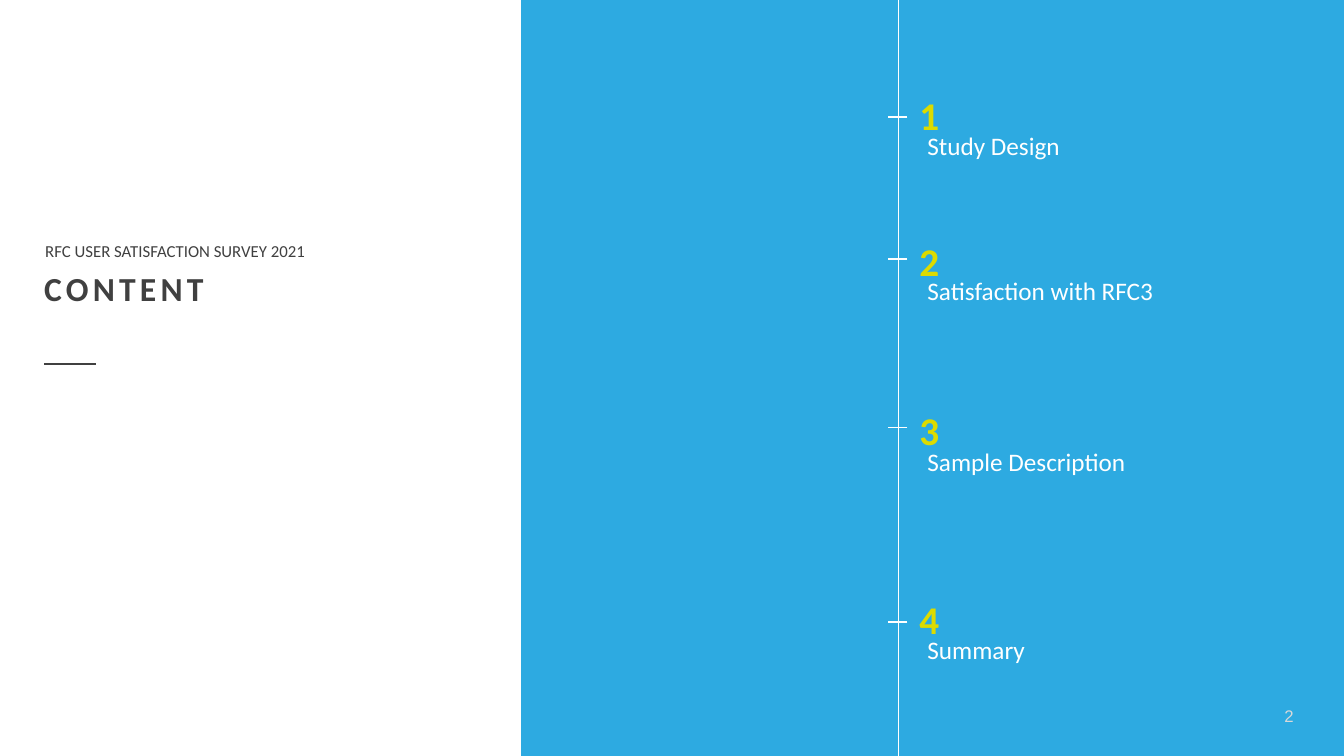
from lxml import etree
from pptx import Presentation
from pptx import util as u
from pptx.dml.color import RGBColor
from pptx.enum import shapes, text
from pptx.oxml import ns

BLUE = RGBColor(0x2D, 0xAA, 0xE1)
WHITE = RGBColor(0xFF, 0xFF, 0xFF)
DARK = RGBColor(0x40, 0x40, 0x40)
YELLOW = RGBColor(0xDC, 0xDB, 0x00)
PALE = RGBColor(0xD9, 0xD9, 0xD9)

CHAPTERS = [
    ("Study Design", 1.16, 0.86, 1.24, 1.54),
    ("Satisfaction with RFC3", 2.57, 2.31, 2.68, 2.52),
    ("Sample Description", 4.24, 3.98, 4.38, 2.21),
    ("Summary", 6.17, 5.86, 6.24, 1.25),
]


def add_text(slide, words, box, size, color, font="Calibri", bold=False,
             spacing=0, wrap=True, align=text.PP_ALIGN.LEFT):
    """Place one line of formatted text in a box given in inches."""
    frame = slide.shapes.add_textbox(*map(u.Inches, box)).text_frame
    frame.word_wrap = wrap
    paragraph = frame.paragraphs[0]
    paragraph.alignment = align
    run = paragraph.add_run()
    run.text = words
    run.font.name = font
    run.font.size = u.Pt(size)
    run.font.bold = bold
    run.font.color.rgb = color
    if spacing:
        run.font._element.set("spc", str(spacing * 100))


def add_line(slide, start, end, color, width=1):
    """Draw a straight line without shadow between two points in inches."""
    line = slide.shapes.add_connector(
        shapes.MSO_CONNECTOR.STRAIGHT, *map(u.Inches, start + end))
    line.line.color.rgb = color
    line.line.width = u.Pt(width)
    etree.SubElement(line._element.spPr, ns.qn("a:effectLst"))


def add_heading(slide, left, top):
    """Place the survey name, the title and the short rule below them."""
    add_text(slide, "CONTENT", (left, top + 0.27, 4.64, 0.5), 24, DARK,
             bold=True, spacing=3)
    add_text(slide, "RFC USER SATISFACTION SURVEY 2021",
             (left + 0.01, top, 3.85, 0.3), 12, DARK)
    rule_y = top + 1.27
    add_line(slide, (left + 0.1, rule_y), (left + 0.61, rule_y), DARK, 1.5)


def add_agenda(slide, left, top, width, height):
    """Place the blue panel with its timeline, chapters and page number."""
    panel = slide.shapes.add_shape(
        shapes.MSO_SHAPE.RECTANGLE, *map(u.Inches, (left, top, width, height)))
    panel.shadow.inherit = False
    panel.fill.solid()
    panel.fill.fore_color.rgb = BLUE
    panel.line.fill.background()

    axis = left + 3.74
    add_line(slide, (axis, top), (axis, top + height), WHITE)
    for number, (chapter, tick_y, number_y, chapter_y, chapter_width) in enumerate(CHAPTERS, 1):
        add_line(slide, (axis + 0.09, top + tick_y),
                 (axis - 0.1, top + tick_y), WHITE)
        add_text(slide, str(number), (axis + 0.11, top + number_y, 0.42, 0.57),
                 28, YELLOW, bold=True, wrap=False)
        add_text(slide, chapter,
                 (axis + 0.19, top + chapter_y, chapter_width, 0.4),
                 18, WHITE, wrap=False)
    add_text(slide, "2", (left + 7.14, top + 6.95, 0.62, 0.4), 12, PALE,
             font="Arial", align=text.PP_ALIGN.RIGHT)


def main():
    """Build the content slide and save it."""
    deck = Presentation()
    deck.slide_width = u.Inches(13.33)
    deck.slide_height = u.Inches(7.5)
    slide = deck.slides.add_slide(deck.slide_layouts[6])
    add_agenda(slide, 5.17, 0, 8.17, 7.5)
    add_heading(slide, 0.34, 2.34)
    deck.save("out.pptx")


if __name__ == "__main__":
    main()
